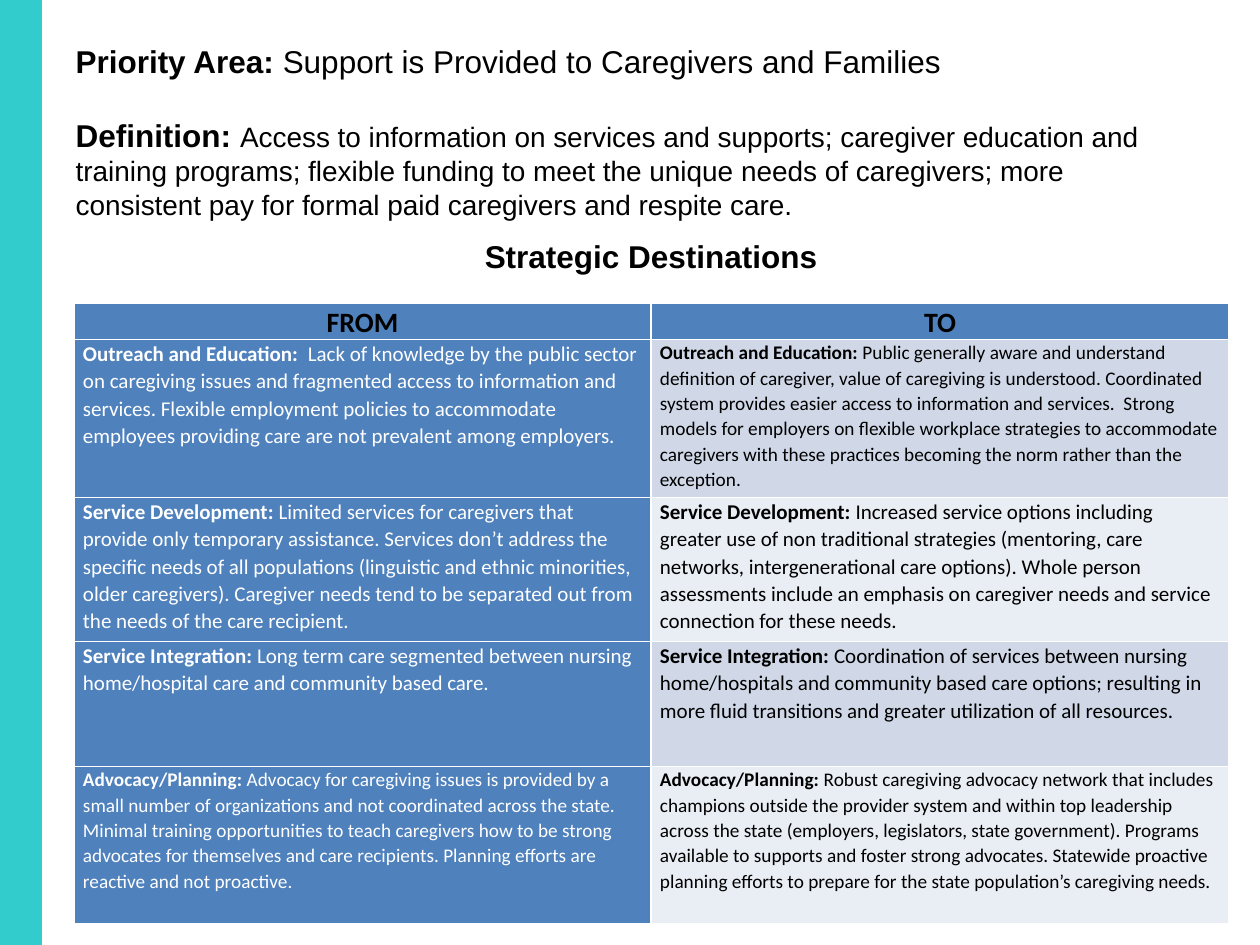
from lxml import etree
from pptx import Presentation
from pptx.dml.color import RGBColor
from pptx.enum import shapes, text
from pptx.oxml.ns import qn
from pptx.util import Pt

BLACK = RGBColor(0, 0, 0)
WHITE = RGBColor(255, 255, 255)
TEAL = RGBColor(0x33, 0xCC, 0xCC)
BLUE = RGBColor(0x4F, 0x81, 0xBD)
BANDS = [RGBColor(0xD0, 0xD8, 0xE8), RGBColor(0xE9, 0xED, 0xF4)]

# label, text, text size
INTRO = [
    ("Priority Area: ", "Support is Provided to Caregivers and Families", 18),
    ("Definition: ", "Access to information on services and supports; caregiver education "
     "and training programs; flexible funding to meet the unique needs of caregivers; more "
     "consistent pay for formal paid caregivers and respite care.", 16),
]
SUBTITLE = "Strategic Destinations"
HEADERS = ["FROM", "TO"]
HEADER_HEIGHT = 36
COLUMN_WIDTHS = [577, 578]

# row height, label, (from text, size), (to text, size)
DESTINATIONS = [
    (158, "Outreach and Education: ",
     (" Lack of knowledge by the public sector on caregiving issues and fragmented access to "
      "information and services. Flexible employment policies to accommodate employees "
      "providing care are not prevalent among employers.", 12),
     ("Public generally aware and understand definition of caregiver, value of caregiving is "
      "understood. Coordinated system provides easier access to information and services.  "
      "Strong models for employers on flexible workplace strategies to accommodate caregivers "
      "with these practices becoming the norm rather than the exception.", 11)),
    (144, "Service Development: ",
     ("Limited services for caregivers that provide only temporary assistance. Services don’t "
      "address the specific needs of all populations (linguistic and ethnic minorities, older "
      "caregivers). Caregiver needs tend to be separated out from the needs of the care "
      "recipient.", 12),
     ("Increased service options including greater use of non traditional strategies "
      "(mentoring, care networks, intergenerational care options). Whole person assessments "
      "include an emphasis on caregiver needs and service connection for these needs.", 12)),
    (125, "Service Integration: ",
     ("Long term care segmented between nursing home/hospital care and community based "
      "care.", 12),
     ("Coordination of services between nursing home/hospitals and community based care "
      "options; resulting in more fluid transitions and greater utilization of all "
      "resources.", 12)),
    (157, "Advocacy/Planning: ",
     ("Advocacy for caregiving issues is provided by a small number of organizations and not "
      "coordinated across the state. Minimal training opportunities to teach caregivers how to "
      "be strong advocates for themselves and care recipients. Planning efforts are reactive "
      "and not proactive.", 11),
     ("Robust caregiving advocacy network that includes champions outside the provider system "
      "and within top leadership across the state (employers, legislators, state government). "
      "Programs available to supports and foster strong advocates. Statewide proactive planning "
      "efforts to prepare for the state population’s caregiving needs.", 11)),
]


def px(n):
    return round(n * 914400 / 126)


def place(sp, left, top, width, height):
    sp.left, sp.top, sp.width, sp.height = map(px, (left, top, width, height))


def add_run(p, words, size, bold=False, color=BLACK, font="Arial"):
    r = p.add_run()
    r.text = words
    r.font.name, r.font.size, r.font.bold = font, Pt(size), bold
    r.font.color.rgb = color


def add_borders(cell):
    """Draw a 1 pt white line on all four sides; lines must precede the fill."""
    tc_pr = cell._tc.get_or_add_tcPr()
    for i, side in enumerate(("a:lnL", "a:lnR", "a:lnT", "a:lnB")):
        line = etree.Element(qn(side), w=str(Pt(1)))
        fill = etree.SubElement(line, qn("a:solidFill"))
        etree.SubElement(fill, qn("a:srgbClr"), val=str(WHITE))
        tc_pr.insert(i, line)


def style_cell(cell, fill):
    """Format the cell and return its paragraph."""
    cell.fill.solid()
    cell.fill.fore_color.rgb = fill
    add_borders(cell)
    cell.margin_left = cell.margin_right = px(9)
    cell.margin_top = cell.margin_bottom = 0
    p = cell.text_frame.paragraphs[0]
    p.line_spacing = 1.07
    return p


def add_intro(slide):
    title = slide.shapes.title
    place(title, 63, 29, 1144, 233)
    tf = title.text_frame
    tf.auto_size = text.MSO_AUTO_SIZE.NONE
    tf.vertical_anchor = text.MSO_ANCHOR.TOP
    tf.margin_top = px(13)
    for i, (label, words, size) in enumerate(INTRO):
        p = tf.add_paragraph() if i else tf.paragraphs[0]
        p.alignment = text.PP_ALIGN.LEFT
        p.space_before = Pt(20.7 if i else 0)
        add_run(p, label, 18, bold=True)
        add_run(p, words, size)


def add_destinations(slide):
    heights = [HEADER_HEIGHT] + [row[0] for row in DESTINATIONS]
    frame = slide.shapes.add_table(len(heights), len(HEADERS), px(74), px(303),
                                   px(sum(COLUMN_WIDTHS)), px(sum(heights)))
    table = frame.table
    table.first_row = table.horz_banding = False
    for column, width in zip(table.columns, COLUMN_WIDTHS):
        column.width = px(width)
    for row, height in zip(table.rows, heights):
        row.height = px(height)

    for c, header in enumerate(HEADERS):
        p = style_cell(table.cell(0, c), BLUE)
        p.alignment = text.PP_ALIGN.CENTER
        add_run(p, header, 16, bold=True, font="Calibri")
    for i, (_, label, *sides) in enumerate(DESTINATIONS):
        looks = [(BLUE, WHITE), (BANDS[i % 2], BLACK)]
        for c, ((words, size), (fill, color)) in enumerate(zip(sides, looks)):
            p = style_cell(table.cell(i + 1, c), fill)
            add_run(p, label, size, True, color, "Calibri")
            add_run(p, words, size, False, color, "Calibri")


def main():
    prs = Presentation()
    prs.slide_width, prs.slide_height = px(1260), px(945)
    slide = prs.slides.add_slide(prs.slide_layouts[5])

    add_intro(slide)
    add_destinations(slide)

    subtitle = slide.shapes.add_textbox(px(105), px(231), px(1092), px(50))
    tf = subtitle.text_frame
    tf.word_wrap = True
    tf.paragraphs[0].alignment = text.PP_ALIGN.CENTER
    add_run(tf.paragraphs[0], SUBTITLE, 18, bold=True)

    stripe = slide.shapes.add_shape(shapes.MSO_SHAPE.RECTANGLE, 0, 0, px(42), px(945))
    stripe.shadow.inherit = False
    stripe.fill.solid()
    stripe.fill.fore_color.rgb = TEAL
    stripe.line.fill.background()

    prs.save("out.pptx")


if __name__ == "__main__":
    main()
